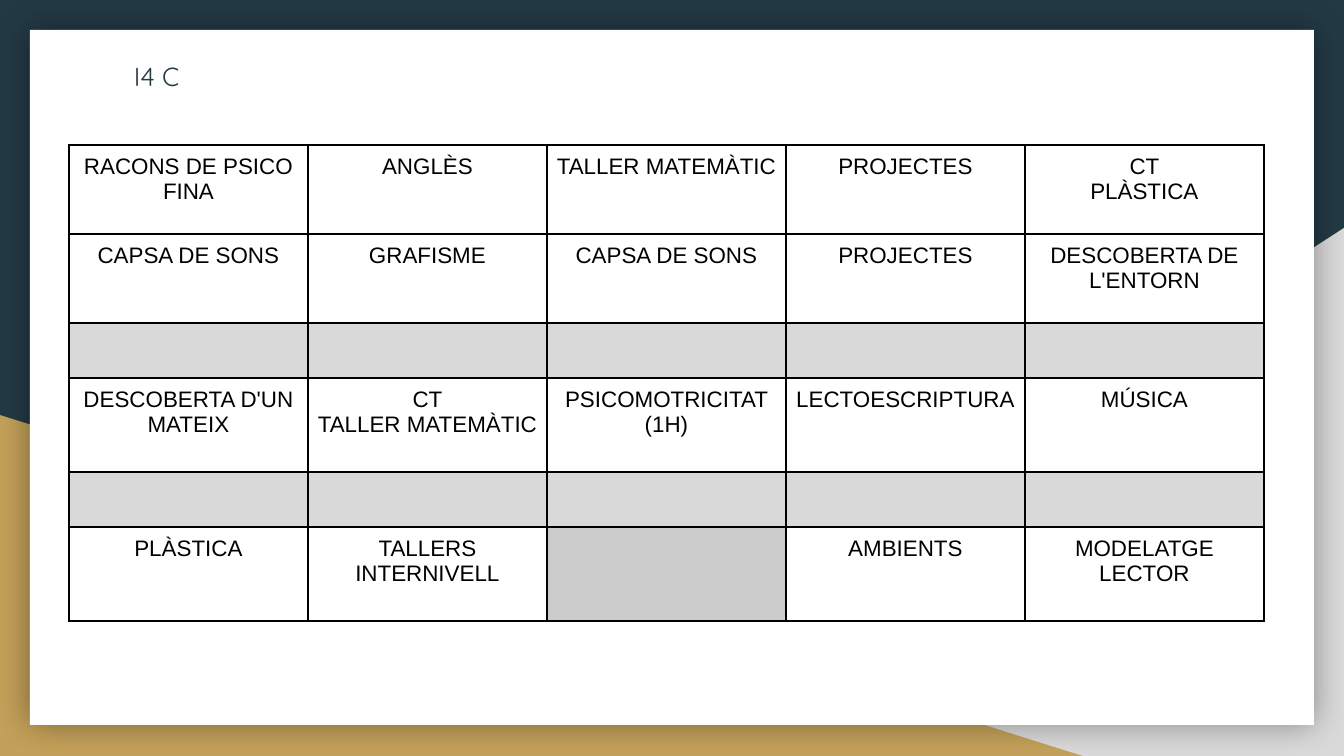
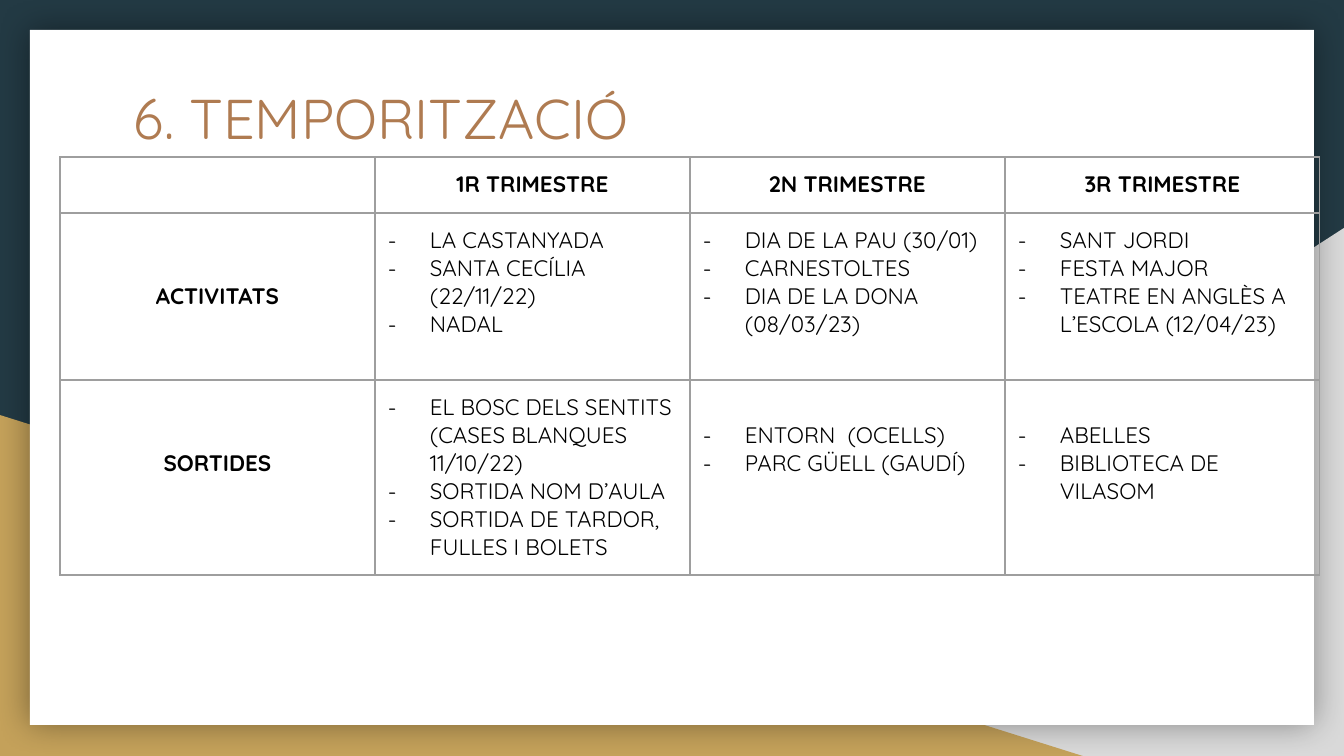
import pptx
import pptx.util
import pptx.dml.color
import pptx.enum.shapes
import pptx.enum.text
import pptx.oxml

PX = 6804
NAVY, GOLD, GREY, WHITE, BLACK = "233A44", "C4A15A", "D9D9D9", "FFFFFF", "000000"
COPPER, SILVER, RULE = "AF7B51", "CCCCCC", "9E9E9E"
NS = 'xmlns:a="http://schemas.openxmlformats.org/drawingml/2006/main"'
CENTER = pptx.enum.text.PP_ALIGN.CENTER
LEFT = pptx.enum.text.PP_ALIGN.LEFT
SHAPES = pptx.enum.shapes.MSO_SHAPE


def paint(fill, color):
    fill.solid()
    fill.fore_color.rgb = pptx.dml.color.RGBColor.from_string(color)


def write(frame, text, font="Quicksand", size=12, color=BLACK, bold=False,
          align=LEFT, inset=13, drop=0, bullet=False):
    frame.word_wrap = True
    for number, line in enumerate(text.split("\n")):
        paragraph = frame.add_paragraph() if number else frame.paragraphs[0]
        paragraph.alignment = align
        run = paragraph.add_run()
        run.text = line
        run.font.name = font
        run.font.size = pptx.util.Pt(size)
        run.font.bold = bold
        paint(run.font.fill, color)
        if bullet:
            properties = paragraph._p.get_or_add_pPr()
            properties.set("marL", str(42 * PX))
            properties.set("indent", str(-42 * PX))
            for mark in (f'<a:buClr {NS}><a:srgbClr val="{color}"/></a:buClr>',
                         f'<a:buFont {NS} typeface="{font}"/>',
                         f'<a:buChar {NS} char="-"/>'):
                properties.append(pptx.oxml.parse_xml(mark))
    frame.margin_left = frame.margin_right = frame.margin_bottom = inset * PX
    frame.margin_top = (inset + drop) * PX


deck = pptx.Presentation()
deck.slide_width = 1344 * PX
deck.slide_height = 756 * PX

timetable = [
    ["RACONS DE PSICO FINA", "ANGLÈS", "TALLER MATEMÀTIC", "PROJECTES", "CT\nPLÀSTICA"],
    ["CAPSA DE SONS", "GRAFISME", "CAPSA DE SONS", "PROJECTES", "DESCOBERTA DE L'ENTORN"],
    [""] * 5,
    ["DESCOBERTA D'UN MATEIX", "CT\nTALLER MATEMÀTIC", "PSICOMOTRICITAT (1H)",
     "LECTOESCRIPTURA", "MÚSICA"],
    [""] * 5,
    ["PLÀSTICA", "TALLERS INTERNIVELL", "", "AMBIENTS", "MODELATGE LECTOR"],
]
terms = [
    ["", "1R TRIMESTRE", "2N TRIMESTRE", "3R TRIMESTRE"],
    ["ACTIVITATS",
     "LA CASTANYADA\nSANTA CECÍLIA (22/11/22)\nNADAL",
     "DIA DE LA PAU (30/01)\nCARNESTOLTES\nDIA DE LA DONA (08/03/23)",
     "SANT JORDI\nFESTA MAJOR\nTEATRE EN ANGLÈS A L’ESCOLA (12/04/23)"],
    ["SORTIDES",
     "EL BOSC DELS SENTITS (CASES BLANQUES 11/10/22)\nSORTIDA NOM D’AULA\n"
     "SORTIDA DE TARDOR, FULLES I BOLETS",
     "ENTORN  (OCELLS)\nPARC GÜELL (GAUDÍ)",
     "ABELLES\nBIBLIOTECA DE VILASOM"],
]
shades = {(row, column): GREY for row in (2, 4) for column in range(5)}
shades[5, 2] = SILVER
drops = {(1, 0): 56, (2, 0): 56, (2, 2): 28, (2, 3): 28}

pages = [
    dict(title="I4 C", title_box=(121, 47, 249, 59), title_size=14, title_color=NAVY,
         rows=timetable, corner=(69, 145), width=239, heights=(89, 89, 55, 94, 55, 94),
         border=BLACK, weight=1, shades=shades, drops={}, lists=False,
         style=dict(font="Arial", inset=9)),
    dict(title="6. TEMPORITZACIÓ", title_box=(121, 71, 698, 140), title_size=30,
         title_color=COPPER,
         rows=terms, corner=(60, 157), width=315, heights=(56, 167, 195),
         border=RULE, weight=0.75, shades={}, drops=drops, lists=True,
         style=dict(inset=13)),
]
backdrop = [
    (SHAPES.RIGHT_TRIANGLE, (527, 228, 817, 528), GREY),
    (SHAPES.RIGHT_TRIANGLE, (0, 415, 1083, 341), GOLD),
    (SHAPES.RECTANGLE, (30, 30, 1284, 695), WHITE),
]

for page in pages:
    slide = deck.slides.add_slide(deck.slide_layouts[6])
    paint(slide.background.fill, NAVY)
    for outline, box, color in backdrop:
        panel = slide.shapes.add_shape(outline, *[n * PX for n in box])
        panel.shadow.inherit = False
        panel.line.fill.background()
        paint(panel.fill, color)
        if color == GREY:
            panel._element.spPr.xfrm.set("flipH", "1")
        if color == WHITE:
            effects = panel._element.spPr.find(pptx.oxml.ns.qn("a:effectLst"))
            effects.append(pptx.oxml.parse_xml(
                f'<a:outerShdw {NS} blurRad="{pptx.util.Pt(18)}" dist="0" dir="0" '
                f'algn="ctr" rotWithShape="0"><a:srgbClr val="{BLACK}">'
                f'<a:alpha val="40000"/></a:srgbClr></a:outerShdw>'))

    heading = slide.shapes.add_textbox(*[n * PX for n in page["title_box"]])
    write(heading.text_frame, page["title"], size=page["title_size"],
          color=page["title_color"])

    rows, heights = page["rows"], page["heights"]
    columns = len(rows[0])
    left, top = page["corner"]
    grid = slide.shapes.add_table(len(rows), columns, left * PX, top * PX,
                                  columns * page["width"] * PX, sum(heights) * PX).table
    grid.first_row = grid.horz_banding = False
    for column in grid.columns:
        column.width = page["width"] * PX
    for r, texts in enumerate(rows):
        grid.rows[r].height = heights[r] * PX
        for c, text in enumerate(texts):
            cell = grid.cell(r, c)
            for side in "LRTB":
                cell._tc.get_or_add_tcPr().append(pptx.oxml.parse_xml(
                    f'<a:ln{side} {NS} w="{pptx.util.Pt(page["weight"])}"><a:solidFill>'
                    f'<a:srgbClr val="{page["border"]}"/></a:solidFill></a:ln{side}>'))
            if (r, c) in page["shades"]:
                paint(cell.fill, page["shades"][r, c])
            else:
                cell.fill.background()
            if text:
                listed = page["lists"] and r > 0 and c > 0
                drop = page["drops"].get((r, c), 0)
                inset = page["style"]["inset"]
                write(cell.text_frame, text, bullet=listed,
                      bold=page["lists"] and not listed,
                      align=LEFT if listed else CENTER, **page["style"])
                cell.margin_left = cell.margin_right = cell.margin_bottom = inset * PX
                cell.margin_top = (inset + drop) * PX

deck.save("out.pptx")
